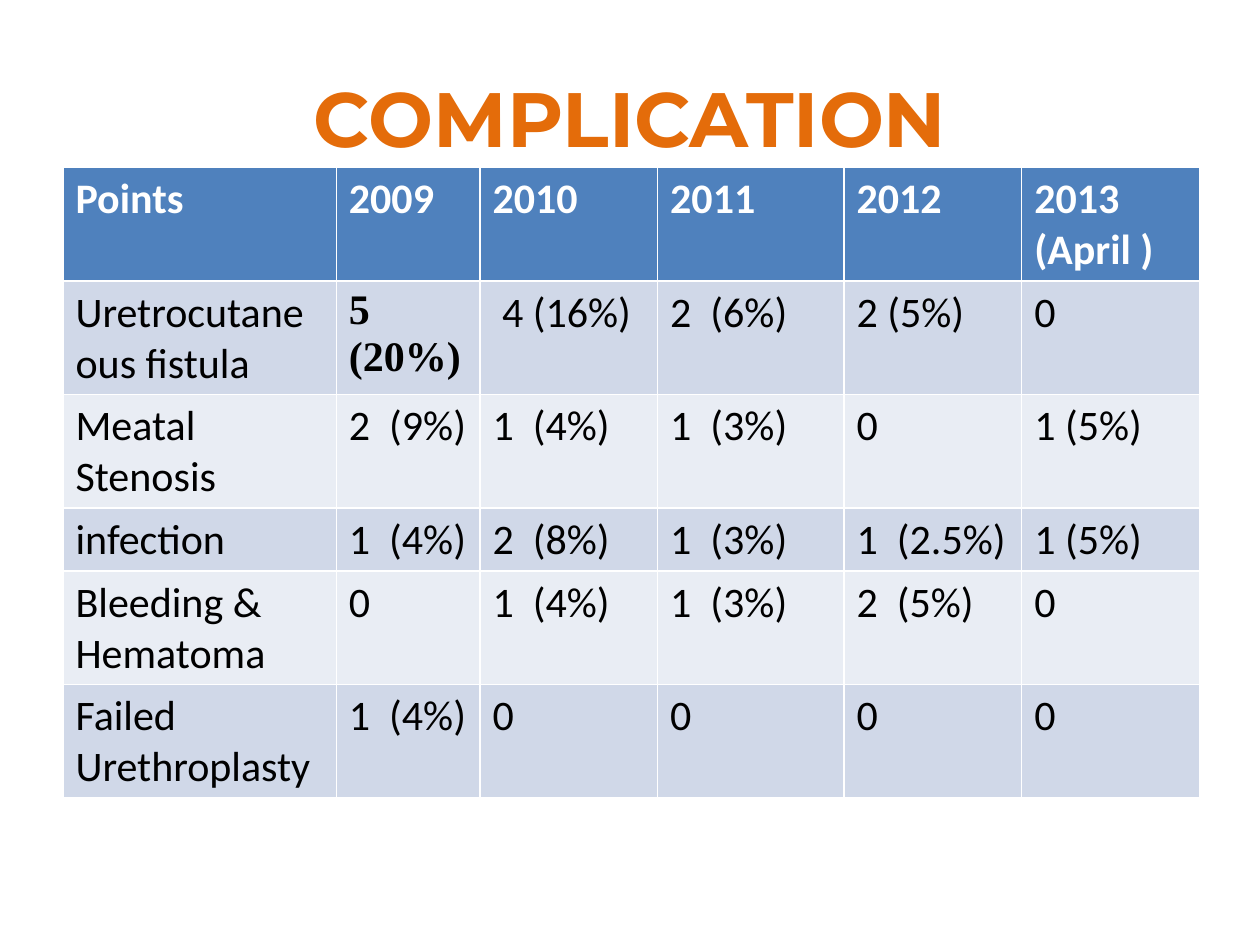
from pptx import Presentation
from pptx.dml.color import RGBColor
from pptx.enum.text import MSO_ANCHOR, PP_ALIGN
from pptx.util import Inches, Pt

TITLE = "COMPLICATION"
HEADER = ["Points", "2009", "2010", "2011", "2012", "2013\n(April )"]
COMPLICATIONS = [
    ["Uretrocutaneous fistula", "5 (20%)", " 4 (16%)", "2  (6%)", "2 (5%)", "0"],
    ["Meatal Stenosis", "2  (9%)", "1  (4%)", "1  (3%)", "0", "1 (5%)"],
    ["infection", "1  (4%)", "2  (8%)", "1  (3%)", "1  (2.5%)", "1 (5%)"],
    ["Bleeding & Hematoma", "0", "1  (4%)", "1  (3%)", "2  (5%)", "0"],
    ["Failed Urethroplasty", "1  (4%)", "0", "0", "0", "0"],
]
EMPHASISED = (1, 1)  # row and column of the value set in bold serif
COLUMN_WIDTHS = [2.17, 1.14, 1.41, 1.48, 1.41, 1.41]
ROW_HEIGHT = 0.41  # minimum; rows grow with their text
MARGIN = 0.5

ORANGE = RGBColor(0xE4, 0x6C, 0x0A)
BLUE = RGBColor(0x4F, 0x81, 0xBD)
WHITE = RGBColor(0xFF, 0xFF, 0xFF)
BLACK = RGBColor(0x00, 0x00, 0x00)
BANDS = [RGBColor(0xD0, 0xD8, 0xE8), RGBColor(0xE9, 0xED, 0xF4)]


def add_run(paragraph, text, font_name, size, color, bold):
    run = paragraph.add_run()
    run.text = text
    run.font.name = font_name
    run.font.size = Pt(size)
    run.font.color.rgb = color
    run.font.bold = bold


def fill_cell(cell, text, fill, color, font_name, bold):
    cell.fill.solid()
    cell.fill.fore_color.rgb = fill
    frame = cell.text_frame
    for index, line in enumerate(text.split("\n")):
        paragraph = frame.add_paragraph() if index else frame.paragraphs[0]
        add_run(paragraph, line, font_name, 24, color, bold)


def add_title(slide, width):
    box = slide.shapes.add_textbox(Inches(MARGIN), Inches(0.3), width, Inches(1.25))
    frame = box.text_frame
    frame.word_wrap = True
    frame.vertical_anchor = MSO_ANCHOR.MIDDLE
    paragraph = frame.paragraphs[0]
    paragraph.alignment = PP_ALIGN.CENTER
    add_run(paragraph, TITLE, "Montserrat", 44, ORANGE, True)


def add_complication_table(slide, width):
    rows = [HEADER] + COMPLICATIONS
    graphic = slide.shapes.add_table(
        len(rows), len(HEADER), Inches(MARGIN), Inches(1.33),
        width, Inches(ROW_HEIGHT * len(rows)))
    table = graphic.table
    for column, column_width in zip(table.columns, COLUMN_WIDTHS):
        column.width = Inches(column_width)
    for r, row in enumerate(rows):
        is_header = r == 0
        fill = BLUE if is_header else BANDS[(r - 1) % 2]
        color = WHITE if is_header else BLACK
        for c, text in enumerate(row):
            emphasised = (r, c) == EMPHASISED
            font_name = "Times New Roman" if emphasised else "Calibri"
            fill_cell(table.cell(r, c), text, fill, color, font_name,
                      is_header or emphasised)
    graphic.height = Inches(5)


def main():
    presentation = Presentation()
    presentation.slide_width = Inches(10)
    presentation.slide_height = Inches(7.5)
    slide = presentation.slides.add_slide(presentation.slide_layouts[6])
    content_width = presentation.slide_width - 2 * Inches(MARGIN)
    add_title(slide, content_width)
    add_complication_table(slide, content_width)
    presentation.save("out.pptx")


if __name__ == "__main__":
    main()
